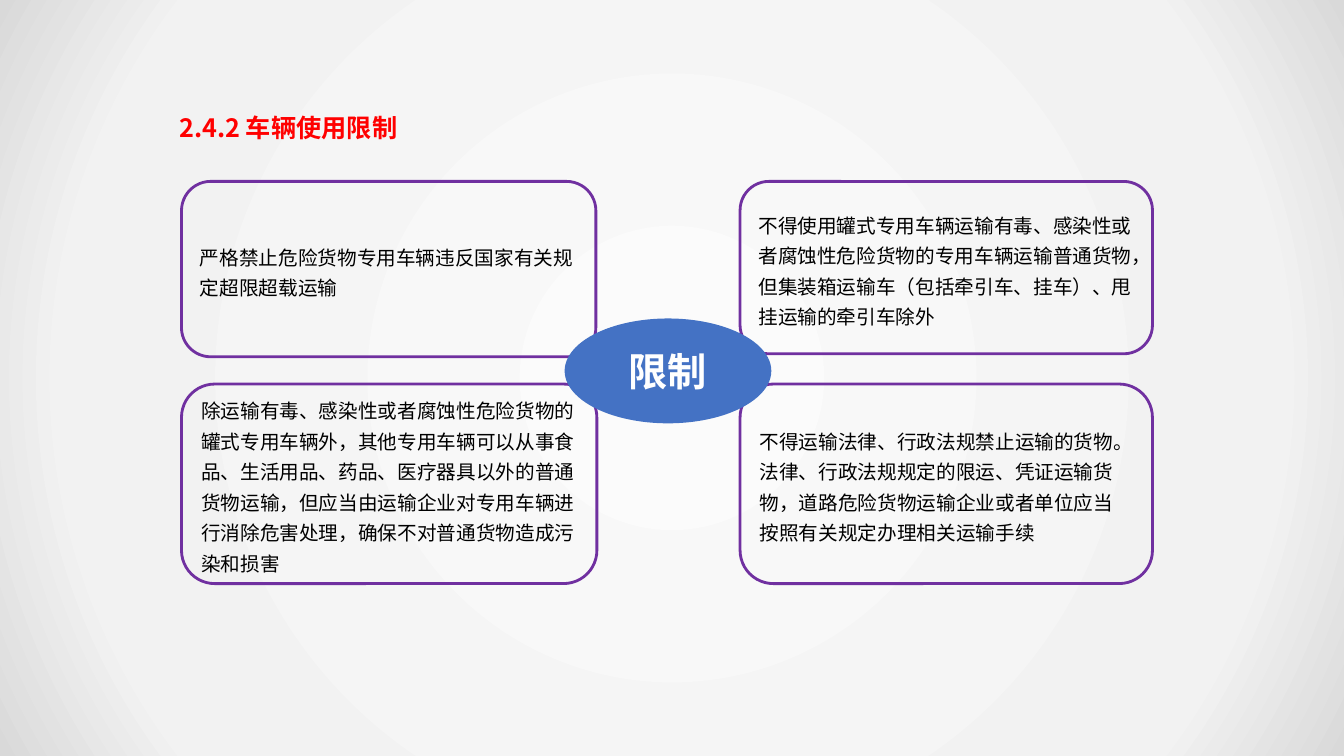
from dataclasses import dataclass

from pptx import Presentation
from pptx.dml.color import RGBColor
from pptx.enum.shapes import MSO_SHAPE
from pptx.enum.text import MSO_ANCHOR, MSO_AUTO_SIZE, PP_ALIGN
from pptx.oxml import parse_xml
from pptx.oxml.ns import nsdecls, qn
from pptx.shapes.autoshape import Shape
from pptx.slide import Slide
from pptx.text.text import TextFrame
from pptx.util import Inches, Pt

RECT, ROUNDED, OVAL = MSO_SHAPE.RECTANGLE, MSO_SHAPE.ROUNDED_RECTANGLE, MSO_SHAPE.OVAL
MIDDLE = MSO_ANCHOR.MIDDLE
LEFT, CENTER = PP_ALIGN.LEFT, PP_ALIGN.CENTER
FIT_SHAPE = MSO_AUTO_SIZE.SHAPE_TO_FIT_TEXT


@dataclass(frozen=True)
class TextStyle:
    size: int
    color: str
    bold: bool = False
    align: PP_ALIGN = LEFT
    spacing: float = 1.0


@dataclass(frozen=True)
class Theme:
    font: str = "Noto Sans CJK SC"
    border: str = "7030A0"
    hub: str = "4472C4"
    backdrop: tuple[tuple[int, str], ...] = ((0, "FBFBFB"), (79, "F2F2F2"), (100, "D9D9D9"))
    title: TextStyle = TextStyle(18, "FF0000", bold=True, spacing=1.25)
    body: TextStyle = TextStyle(14, "000000", spacing=1.3)
    hub_text: TextStyle = TextStyle(28, "FFFFFF", bold=True, align=CENTER)


@dataclass(frozen=True)
class Box:
    left: float
    top: float
    width: float
    height: float

    def emu(self) -> tuple[int, int, int, int]:
        return Inches(self.left), Inches(self.top), Inches(self.width), Inches(self.height)


@dataclass(frozen=True)
class Card:
    box: Box
    text: str


THEME = Theme()
PAGE = Box(0, 0, 13.33, 7.5)
TITLE_BOX = Box(1.68, 0.99, 2.53, 0.48)
HUB_BOX = Box(5.6, 3.16, 2.05, 1.04)
COL_1, COL_2 = 1.8, 7.34
ROW_1, ROW_2 = 1.8, 3.81
CARDS = (
    Card(Box(COL_1, ROW_1, 4.11, 1.74), "严格禁止危险货物专用车辆违反国家有关规定超限超载运输"),
    Card(
        Box(COL_2, ROW_1, 4.09, 1.71),
        "不得使用罐式专用车辆运输有毒、感染性或者腐蚀性危险货物的专用车辆运输普通货物，"
        "但集装箱运输车（包括牵引车、挂车）、甩挂运输的牵引车除外",
    ),
    Card(
        Box(COL_1, ROW_2, 4.12, 1.98),
        "除运输有毒、感染性或者腐蚀性危险货物的罐式专用车辆外，其他专用车辆可以从事食品、"
        "生活用品、药品、医疗器具以外的普通货物运输，但应当由运输企业对专用车辆进行消除危害处理，"
        "确保不对普通货物造成污染和损害",
    ),
    Card(
        Box(COL_2, ROW_2, 4.09, 1.98),
        "不得运输法律、行政法规禁止运输的货物。法律、行政法规规定的限运、凭证运输货物，"
        "道路危险货物运输企业或者单位应当按照有关规定办理相关运输手续",
    ),
)


def write_text(tf: TextFrame, text: str, style: TextStyle) -> None:
    """Fill a text frame with one styled paragraph."""
    p = tf.paragraphs[0]
    p.text = text
    p.alignment = style.align
    p.line_spacing = style.spacing
    p.font.name = THEME.font
    p.font.size = Pt(style.size)
    p.font.bold = style.bold
    p.font.color.rgb = RGBColor.from_string(style.color)
    latin = p._p.pPr.find(qn("a:defRPr")).find(qn("a:latin"))
    latin.addnext(parse_xml(f'<a:ea {nsdecls("a")} typeface="{THEME.font}"/>'))


def add_panel(slide: Slide, kind: MSO_SHAPE, box: Box, fill: str = "", line: str = "") -> Shape:
    """Add a flat preset shape with an optional fill and outline."""
    sp = slide.shapes.add_shape(kind, *box.emu())
    sp.shadow.inherit = False
    if fill:
        sp.fill.solid()
        sp.fill.fore_color.rgb = RGBColor.from_string(fill)
    else:
        sp.fill.background()
    if line:
        sp.line.color.rgb = RGBColor.from_string(line)
        sp.line.width = Pt(2)
    else:
        sp.line.fill.background()
    sp.text_frame.word_wrap = True
    sp.text_frame.vertical_anchor = MIDDLE
    return sp


def add_backdrop(slide: Slide) -> None:
    """Cover the page with a radial gradient."""
    sp = add_panel(slide, RECT, PAGE)
    stops = "".join(
        f'<a:gs pos="{pos * 1000}"><a:srgbClr val="{color}"/></a:gs>' for pos, color in THEME.backdrop
    )
    gradient = parse_xml(
        f'<a:gradFill {nsdecls("a")} rotWithShape="1"><a:gsLst>{stops}</a:gsLst>'
        '<a:path path="circle"><a:fillToRect l="50000" t="50000" r="50000" b="50000"/></a:path>'
        "</a:gradFill>"
    )
    sp_pr = sp._element.spPr
    sp_pr.replace(sp_pr.find(qn("a:noFill")), gradient)


def add_title(slide: Slide, text: str) -> None:
    """Add the section heading."""
    tf = slide.shapes.add_textbox(*TITLE_BOX.emu()).text_frame
    tf.word_wrap = True
    tf.auto_size = FIT_SHAPE
    write_text(tf, text, THEME.title)


def main() -> None:
    """Build the slide and save it."""
    prs = Presentation()
    prs.slide_width, prs.slide_height = Inches(PAGE.width), Inches(PAGE.height)
    slide = prs.slides.add_slide(prs.slide_layouts[6])
    add_backdrop(slide)
    for card in CARDS:
        sp = add_panel(slide, ROUNDED, card.box, line=THEME.border)
        write_text(sp.text_frame, card.text, THEME.body)
    hub = add_panel(slide, OVAL, HUB_BOX, fill=THEME.hub)
    write_text(hub.text_frame, "限制", THEME.hub_text)
    add_title(slide, "2.4.2 车辆使用限制")
    prs.save("out.pptx")


if __name__ == "__main__":
    main()
